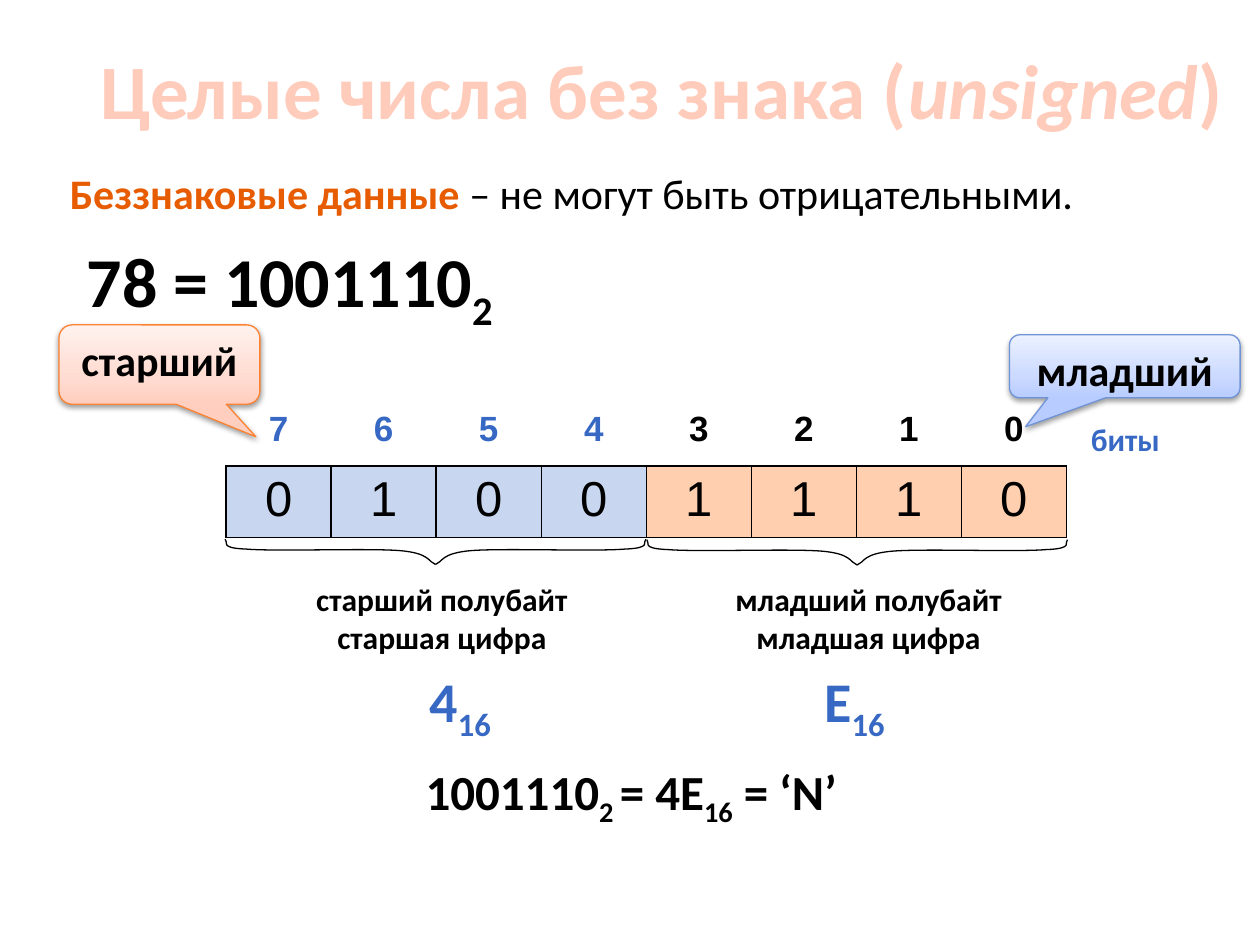
from pptx import Presentation
from pptx import util as u
from pptx.dml.color import RGBColor
from pptx.enum import shapes, text
from pptx.oxml import parse_xml
from pptx.oxml.ns import nsdecls, qn

BLACK = RGBColor(0x00, 0x00, 0x00)
BLUE = RGBColor(0x36, 0x68, 0xC4)
ORANGE = RGBColor(0xE7, 0x5C, 0x01)
PEACH = RGBColor(0xFF, 0xCC, 0xBB)
HIGH_FILL = RGBColor(0xC8, 0xD6, 0xF0)
LOW_FILL = RGBColor(0xFF, 0xCF, 0xAF)
BLUE_EDGE = RGBColor(0x70, 0x94, 0xD7)
ORANGE_EDGE = RGBColor(0xFD, 0x82, 0x31)
BLUE_STOPS = [
    (0, RGBColor(0xB8, 0xCC, 0xFF)),
    (35, RGBColor(0xCC, 0xDA, 0xFF)),
    (100, RGBColor(0xEB, 0xF1, 0xFF)),
]
ORANGE_STOPS = [
    (0, RGBColor(0xFF, 0xCE, 0xBF)),
    (35, RGBColor(0xFF, 0xDC, 0xD2)),
    (100, RGBColor(0xFF, 0xF2, 0xEE)),
]

CENTER = text.PP_ALIGN.CENTER
SUB = {"subscript": True}
COLUMN = u.Cm(2.117)  # width of one bit

# Half a brace, cm from its outer end: a start, then three points per curve
HALF_BRACE = [
    (0, 0),
    (0.08, 0.05), (-0.15, 0.18), (0.43, 0.2),
    (1.02, 0.25), (2.87, 0.18), (3.51, 0.23),
    (4.14, 0.28), (4.09, 0.46), (4.24, 0.51),
]


class SlideBuilder:
    font = "Calibri"

    def __init__(self, slide):
        self.slide = slide

    def add_run(self, paragraph, words, size, color=BLACK, bold=True,
                italic=False, subscript=False, font=None):
        run = paragraph.add_run()
        run.text = words
        run.font.name = font or self.font
        run.font.size = u.Pt(size)
        run.font.bold = bold
        run.font.italic = italic
        run.font.color.rgb = color
        if subscript:
            run.font._element.set("baseline", "-25000")

    def text(self, box, lines, size, color=BLACK, align=None, wrap=False, middle=False):
        """Each line is a list of (words, style) runs."""
        frame = self.slide.shapes.add_textbox(*map(u.Cm, box)).text_frame
        frame.word_wrap = wrap
        if middle:
            frame.vertical_anchor = text.MSO_ANCHOR.MIDDLE
        else:
            frame.auto_size = text.MSO_AUTO_SIZE.SHAPE_TO_FIT_TEXT
        for index, runs in enumerate(lines):
            paragraph = frame.add_paragraph() if index else frame.paragraphs[0]
            paragraph.alignment = align
            for words, style in runs:
                self.add_run(paragraph, words, size, **{"color": color, **style})

    def row(self, left, top, height, values, size, bold, colors, fills=None):
        """A one-row table; with fills it also gets black borders."""
        table = self.slide.shapes.add_table(
            1, len(values), u.Cm(left), u.Cm(top),
            COLUMN * len(values), u.Cm(height)).table
        table.first_row = table.horz_banding = False
        for index, value in enumerate(values):
            table.columns[index].width = COLUMN
            cell = table.cell(0, index)
            paragraph = cell.text_frame.paragraphs[0]
            paragraph.alignment = CENTER
            self.add_run(paragraph, value, size, colors[index], bold, font="Arial")
            if fills:
                self.border(cell)
                cell.fill.solid()
                cell.fill.fore_color.rgb = fills[index]
            else:
                cell.fill.background()

    def border(self, cell):
        properties = cell._tc.get_or_add_tcPr()
        for side in ("lnL", "lnR", "lnT", "lnB"):
            properties.append(parse_xml(
                f'<a:{side} {nsdecls("a")} w="12700"><a:solidFill>'
                f'<a:srgbClr val="{BLACK}"/></a:solidFill></a:{side}>'))

    def callout(self, box, words, tip, stops, edge):
        shape = self.slide.shapes.add_shape(
            shapes.MSO_SHAPE.ROUNDED_RECTANGULAR_CALLOUT, *map(u.Cm, box))
        shape.adjustments[0], shape.adjustments[1] = tip
        shape.line.color.rgb = edge
        shape.line.width = u.Pt(0.75)
        # Gradient from the bottom up, and a soft shadow below
        colors = "".join(f'<a:gs pos="{at * 1000}"><a:srgbClr val="{color}"/></a:gs>'
                         for at, color in stops)
        shape.line._get_or_add_ln().addprevious(parse_xml(
            f'<a:gradFill {nsdecls("a")} rotWithShape="1"><a:gsLst>{colors}</a:gsLst>'
            '<a:lin ang="16200000" scaled="1"/></a:gradFill>'))
        shape._element.spPr.append(parse_xml(
            f'<a:effectLst {nsdecls("a")}><a:outerShdw blurRad="40000" dist="20000" '
            f'dir="5400000" rotWithShape="0"><a:srgbClr val="{BLACK}">'
            '<a:alpha val="38000"/></a:srgbClr></a:outerShdw></a:effectLst>'))
        frame = shape.text_frame
        frame.vertical_anchor = text.MSO_ANCHOR.TOP
        paragraph = frame.paragraphs[0]
        paragraph.alignment = CENTER
        self.add_run(paragraph, words, 24)

    def brace(self, left, right, top):
        group = self.slide.shapes.add_group_shape()
        for end, direction in ((left, 1), (right, -1)):
            outline = [(u.Cm(end + direction * x), u.Cm(top + y)) for x, y in HALF_BRACE]
            freeform = group.shapes.build_freeform(*outline[0])
            freeform.add_line_segments(outline[1:], close=False)
            shape = freeform.convert_to_shape()
            self.curve(shape)
            shape.shadow.inherit = False
            shape.fill.background()
            shape.line.color.rgb = BLACK
            shape.line.width = u.Pt(0.75)

    def curve(self, shape):
        """Join every three line segments into one Bezier curve."""
        segments = list(shape._element.iter(qn("a:lnTo")))
        for first in range(0, len(segments), 3):
            bezier = parse_xml(f'<a:cubicBezTo {nsdecls("a")}/>')
            segments[first].addprevious(bezier)
            for segment in segments[first:first + 3]:
                bezier.append(segment[0])
                segment.getparent().remove(segment)


def main():
    presentation = Presentation()
    presentation.slide_width, presentation.slide_height = u.Cm(25.4), u.Cm(19.05)
    builder = SlideBuilder(presentation.slides.add_slide(presentation.slide_layouts[6]))

    # Title, number and definition
    builder.text((1.27, 0.2, 24.13, 3.18),
                 [[("Целые числа без знака (", {}), ("unsigned", {"italic": True}), (")", {})]],
                 44, PEACH, CENTER, wrap=True, middle=True)
    builder.text((1.5, 4.67, 9.65, 1.96), [[("78 = 1001110", {}), ("2", SUB)]], 40)
    builder.text((1.16, 3.25, 23.37, 1.27),
                 [[("Беззнаковые данные ", {"color": ORANGE}),
                   ("– не могут быть отрицательными.", {"bold": False})]],
                 24, wrap=True)

    # Bits and their numbers
    builder.row(4.56, 9.39, 1.45, "01001110", 28, False,
                [BLACK] * 8, [HIGH_FILL] * 4 + [LOW_FILL] * 4)
    builder.row(4.56, 8.13, 1.09, "76543210", 20, True, [BLUE] * 4 + [BLACK] * 4)
    builder.text((21.74, 8.34, 1.93, 1.02), [[("биты", {})]], 18, BLUE)

    # Callouts for the lowest and highest bit
    builder.callout((20.35, 6.75, 4.65, 1.27), "младший", (-0.43, 0.96), BLUE_STOPS, BLUE_EDGE)
    builder.callout((1.19, 6.55, 4.05, 1.6), "старший", (0.48, 0.91), ORANGE_STOPS, ORANGE_EDGE)

    # Braces under the two half-bytes
    builder.brace(4.54, 13.02, 10.87)
    builder.brace(13.04, 21.52, 10.88)

    # Half-byte captions and their digits
    for left, width, rank, digit_rank, digit_left, digit in (
            (5.72, 6.38, "старший", "старшая", 8.41, "4"),
            (14.21, 6.6, "младший", "младшая", 16.37, "E")):
        builder.text((left, 11.57, width, 1.78),
                     [[(f"{rank} полубайт", {})], [(f"{digit_rank} цифра", {})]],
                     18, align=CENTER)
        builder.text((digit_left, 13.32, 1.85, 1.63), [[(digit, {}), ("16", SUB)]], 32, BLUE)

    # Result
    builder.text((8.33, 15.22, 10.13, 1.45),
                 [[("1001110", {}), ("2 ", SUB), ("= 4E", {}), ("16", SUB), (" = ‘N’", {})]], 28)

    presentation.save("out.pptx")


if __name__ == "__main__":
    main()
